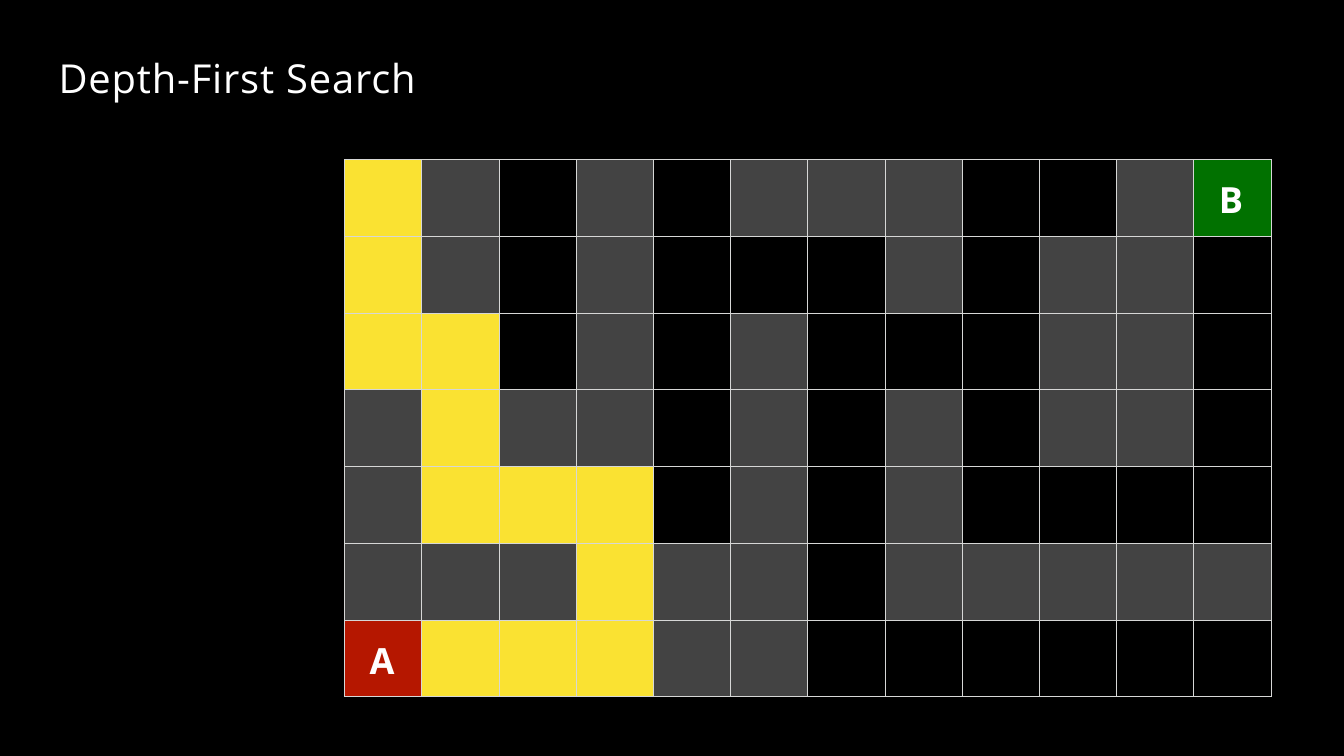
from pptx import Presentation
from pptx.dml.color import RGBColor
from pptx.enum.text import MSO_ANCHOR, PP_ALIGN
from pptx.oxml import parse_xml
from pptx.oxml.ns import nsdecls
from pptx.util import Pt

FONT = "Open Sans"
WHITE = "FFFFFF"
BLACK = "000000"
GRID_LINE = "D6D7D6"
CELL_WIDTH = 90.96
CELL_HEIGHT = 90.4

# "#" wall, "." open, "*" explored, A start, B goal
MAZE = [
    "*#.#.###..#B",
    "*#.#...#.##.",
    "**.#.#...##.",
    "#*##.#.#.##.",
    "#***.#.#....",
    "###*##.#####",
    "A***##......",
]
CELL_FILLS = {"#": "434343", ".": BLACK, "*": "FAE232", "A": "B51700", "B": "017100"}


def set_fill(fill, color):
    fill.solid()
    fill.fore_color.rgb = RGBColor.from_string(color)


def format_text(paragraph, size, spacing, bold=False):
    """Format every run; spacing is the letter spacing in points."""
    paragraph.alignment = PP_ALIGN.LEFT
    for run in paragraph.runs:
        run.font.name = FONT
        run.font.size = Pt(size)
        run.font.bold = bold
        run.font.color.rgb = RGBColor.from_string(WHITE)
        run.font._element.set("spc", str(round(spacing * 100)))


def add_title(slide, text):
    title = slide.shapes.title
    title.left, title.top = Pt(69), Pt(62)
    title.width, title.height = Pt(911), Pt(58)
    frame = title.text_frame
    frame.text = text
    frame.vertical_anchor = MSO_ANCHOR.TOP
    frame.margin_left = frame.margin_right = frame.margin_bottom = 0
    frame.margin_top = Pt(1)
    format_text(frame.paragraphs[0], 47, 1)


def add_borders(cell):
    properties = cell._tc.get_or_add_tcPr()
    for side in "LRTB":
        properties.append(parse_xml(
            f'<a:ln{side} {nsdecls("a")} w="{Pt(1)}"><a:solidFill>'
            f'<a:srgbClr val="{GRID_LINE}"/></a:solidFill></a:ln{side}>'))


def label_cell(cell, letter):
    cell.text = letter
    cell.vertical_anchor = MSO_ANCHOR.TOP
    cell.margin_left, cell.margin_top = Pt(29.5), Pt(18.5)
    cell.margin_right = cell.margin_bottom = 0
    format_text(cell.text_frame.paragraphs[0], 42.5, 2, bold=True)


def add_maze(slide, left, top):
    row_count, column_count = len(MAZE), len(MAZE[0])
    table = slide.shapes.add_table(
        row_count, column_count, Pt(left), Pt(top),
        Pt(column_count * CELL_WIDTH), Pt(row_count * CELL_HEIGHT)).table
    table.first_row = table.horz_banding = False
    for column in table.columns:
        column.width = Pt(CELL_WIDTH)
    for row, symbols in zip(table.rows, MAZE):
        row.height = Pt(CELL_HEIGHT)
        for cell, symbol in zip(row.cells, symbols):
            add_borders(cell)
            set_fill(cell.fill, CELL_FILLS[symbol])
            if symbol.isalpha():
                label_cell(cell, symbol)


def main():
    presentation = Presentation()
    presentation.slide_width = Pt(1583.28)
    presentation.slide_height = Pt(890.64)
    slide = presentation.slides.add_slide(presentation.slide_layouts[5])
    set_fill(slide.background.fill, BLACK)
    add_title(slide, "Depth-First Search")
    add_maze(slide, 406, 188)
    presentation.save("out.pptx")


if __name__ == "__main__":
    main()
